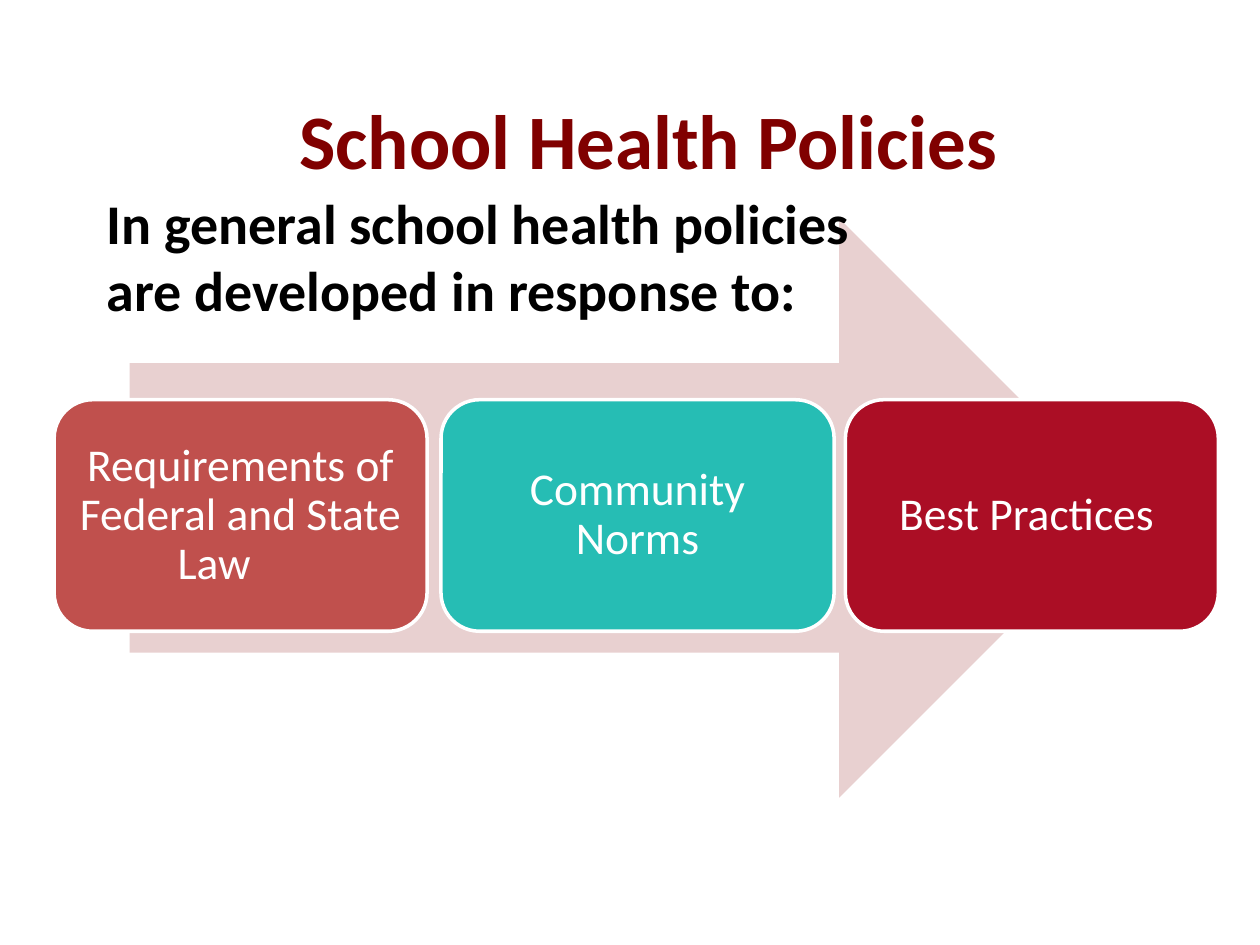
from pptx import Presentation
from pptx.dml.color import RGBColor as Color
from pptx.enum.shapes import MSO_SHAPE as Shape
from pptx.enum.text import MSO_ANCHOR as Anchor, MSO_AUTO_SIZE as AutoSize, PP_ALIGN as Align
from pptx.util import Inches, Pt

THEME = {
    "font": "Calibri",
    "title": "800000", "intro": "000000", "arrow": "E8D0D0", "light": "FFFFFF",
    "law": "C0504D", "community": "26BDB4", "practice": "AB0E25",
    "title_size": 44, "intro_size": 32, "card_size": 26,
}

deck = Presentation()
deck.slide_width, deck.slide_height = Inches(10), Inches(7.5)
page = deck.slides.add_slide(deck.slide_layouts[5])


def area(left, top, width, height):
    across, down = deck.slide_width / 100, deck.slide_height / 100
    return [round(share * unit) for share, unit in
            zip((left, top, width, height), (across, down, across, down))]


def write(box, text, size, color, align, bold=False):
    frame = box.text_frame
    frame.text = text
    frame.word_wrap = True
    para = frame.paragraphs[0]
    para.alignment = align
    for span in para.runs:
        span.font.name = THEME["font"]
        span.font.size = Pt(THEME[size])
        span.font.bold = bold
        span.font.color.rgb = Color.from_string(THEME[color])
    return frame


title = page.shapes.title
title.left, title.top, title.width, title.height = area(4.4, 10.1, 94.2, 9.1)
frame = write(title, "School Health Policies", "title_size", "title", Align.CENTER, True)
frame.vertical_anchor = Anchor.MIDDLE
frame.auto_size = AutoSize.NONE

arrow = page.shapes.add_shape(Shape.RIGHT_ARROW, *area(10.3, 23.1, 79.3, 61.3))
arrow.shadow.inherit = False
arrow.fill.solid()
arrow.fill.fore_color.rgb = Color.from_string(THEME["arrow"])
arrow.line.fill.background()

cards = [
    ("Requirements of Federal and State Law\t", "law", 4.3, 29.6),
    ("Community Norms", "community", 35, 31.2),
    ("Best Practices ", "practice", 67.1, 29.6),
]
for text, color, left, width in cards:
    card = page.shapes.add_shape(Shape.ROUNDED_RECTANGLE, *area(left, 42.3, width, 24.5))
    card.shadow.inherit = False
    card.fill.solid()
    card.fill.fore_color.rgb = Color.from_string(THEME[color])
    card.line.color.rgb = Color.from_string(THEME["light"])
    card.line.width = Pt(2)
    frame = write(card, text, "card_size", "light", Align.CENTER)
    frame.vertical_anchor = Anchor.MIDDLE
    frame.margin_left = frame.margin_right = Inches(0.11)
    frame.margin_top = frame.margin_bottom = Inches(0.11)
    frame.paragraphs[0].line_spacing = 0.9

intro = page.shapes.add_textbox(*area(7.5, 19.3, 65, 15.7))
write(intro, "In general school health policies are developed in response to:",
      "intro_size", "intro", Align.LEFT, True).auto_size = AutoSize.SHAPE_TO_FIT_TEXT

deck.save("out.pptx")
